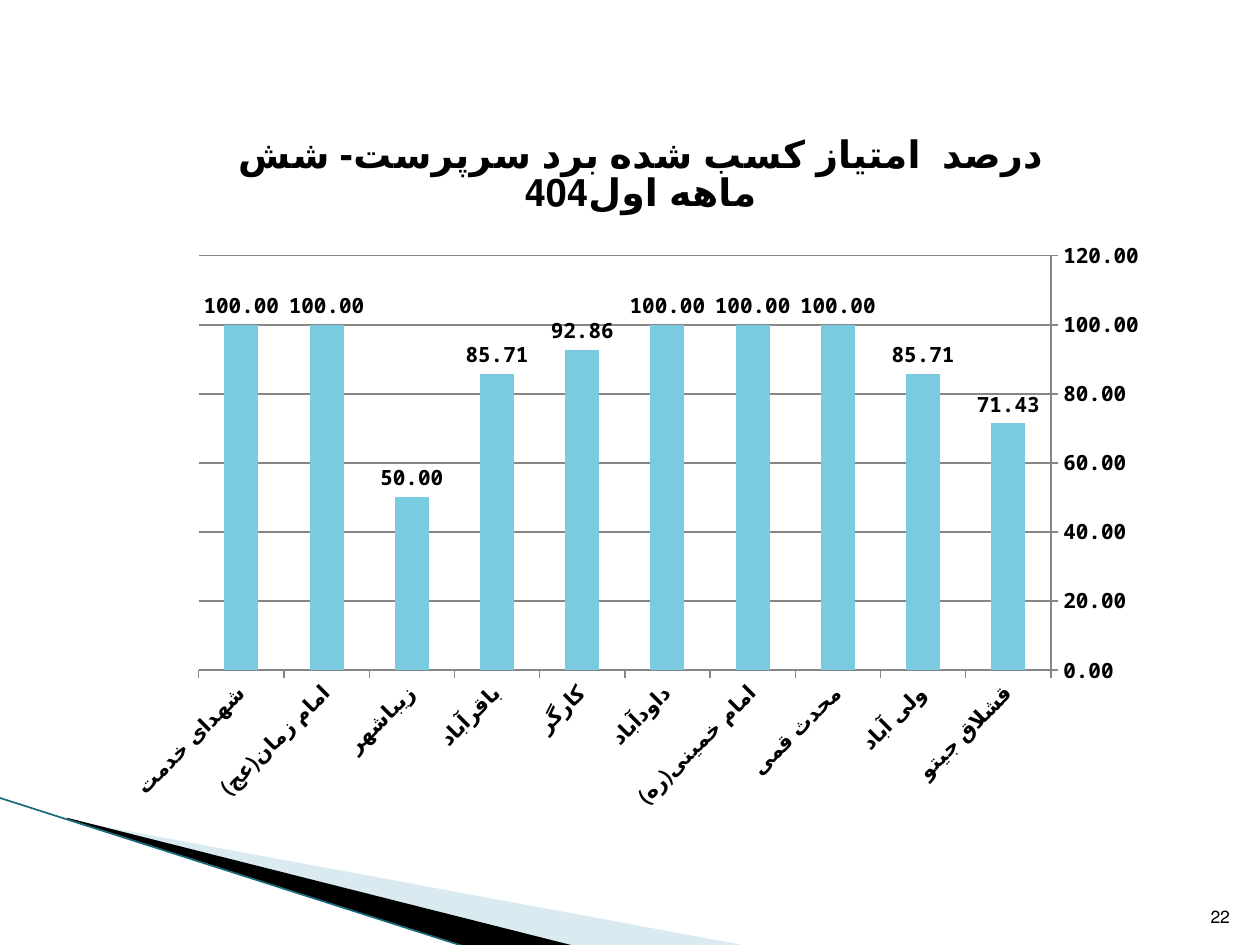
from lxml import etree
from pptx import Presentation
from pptx.chart.data import CategoryChartData
from pptx.dml.color import RGBColor
from pptx.enum.chart import XL_CHART_TYPE, XL_LABEL_POSITION, XL_TICK_MARK
from pptx.enum.shapes import MSO_CONNECTOR
from pptx.enum.text import MSO_ANCHOR, PP_ALIGN
from pptx.oxml import parse_xml
from pptx.oxml.ns import nsdecls, qn
from pptx.util import Inches, Pt

COLUMNS = XL_CHART_TYPE.COLUMN_CLUSTERED
OUTSIDE_END = XL_LABEL_POSITION.OUTSIDE_END
TICK_OUT = XL_TICK_MARK.OUTSIDE
STRAIGHT = MSO_CONNECTOR.STRAIGHT
BOTTOM = MSO_ANCHOR.BOTTOM
RIGHT = PP_ALIGN.RIGHT

FONT = "Noto Sans Mono"
BLACK, GREY, BAR = "000000", "868686", "7ACBE0"
PALE, TEAL = "A0CBDC", "17697D"

TITLE = "درصد  امتیاز کسب شده برد سرپرست- شش ماهه اول404"
SCORES = {
    "قشلاق جیتو": 71.43,
    "ولی آباد": 85.71,
    "محدث قمی": 100,
    "امام خمینی(ره)": 100,
    "داودآباد": 100,
    "کارگر": 92.86,
    "باقرآباد": 85.71,
    "زیباشهر": 50,
    "امام زمان(عج)": 100,
    "شهدای خدمت": 100,
}


def rgb(color):
    return RGBColor.from_string(color)


def style_font(font, size, bold=False):
    font.name = FONT
    font.size = Pt(size)
    font.bold = bold
    font.color.rgb = rgb(BLACK)


def add_wedge(s, left, top, points, color, opacity=None):
    """Draw a filled outline; points are offsets in inches from left, top."""
    corners = [(Inches(left + x), Inches(top + y)) for x, y in points]
    builder = s.shapes.build_freeform(*corners[0])
    builder.add_line_segments(corners[1:], close=True)
    shape = builder.convert_to_shape()
    shape.shadow.inherit = False
    shape.line.fill.background()
    shape.fill.solid()
    shape.fill.fore_color.rgb = rgb(color)
    if opacity is not None:
        clr = shape.fill._xPr.find(qn("a:solidFill"))[0]
        etree.SubElement(clr, qn("a:alpha"), val=str(opacity * 1000))


def add_corner_decoration(s, left, top):
    add_wedge(s, left + 0.56, top + 0.17,
              [(0, 0.01), (5.4, 1.01), (4.01, 1.01), (0, 0)], PALE, 40)
    add_wedge(s, left + 0.54, top + 0.16,
              [(0, 0), (4.04, 1.02), (3.19, 1.03), (0.01, 0.01)], BLACK)
    edge = s.shapes.add_connector(STRAIGHT, Inches(left), Inches(top),
                                  Inches(left + 3.72), Inches(top + 1.19))
    edge.line.color.rgb = rgb(TEAL)
    edge.line.width = Pt(0.95)
    etree.SubElement(edge._element.spPr, qn("a:effectLst"))


def add_slide_number(s, left, top, width, height, number):
    box = s.shapes.add_textbox(Inches(left), Inches(top), Inches(width), Inches(height))
    tf = box.text_frame
    tf.word_wrap = True
    tf.vertical_anchor = BOTTOM
    p = tf.paragraphs[0]
    p.alignment = RIGHT
    p._p.get_or_add_pPr().set("rtl", "1")
    r = p.add_run()
    r.text = number
    style_font(r.font, 10)


def set_plot_box(chart, x, y, w, h):
    """Fix the inner plot area, in fractions of the chart."""
    plot_area = chart._chartSpace.chart.plotArea
    for old in plot_area.findall(qn("c:layout")):
        plot_area.remove(old)
    sizes = "".join(f'<c:{tag} val="{val}"/>'
                    for tag, val in zip("xywh", (x, y, w, h)))
    plot_area.insert(0, parse_xml(
        f'<c:layout {nsdecls("c")}><c:manualLayout>'
        '<c:layoutTarget val="inner"/><c:xMode val="edge"/><c:yMode val="edge"/>'
        f'{sizes}</c:manualLayout></c:layout>'))


def style_axis(axis):
    axis.major_tick_mark = TICK_OUT
    axis.format.line.color.rgb = rgb(GREY)
    style_font(axis.tick_labels.font, 12, bold=True)


def add_score_chart(s, left, top, width, height):
    data = CategoryChartData(number_format="0.00")
    data.categories = list(SCORES)
    data.add_series("Series 1", list(SCORES.values()))
    chart = s.shapes.add_chart(COLUMNS, Inches(left), Inches(top), Inches(width),
                               Inches(height), data).chart
    style_font(chart.font, 18)
    chart.has_legend = False
    chart.has_title = True
    p = chart.chart_title.text_frame.paragraphs[0]
    r = p.add_run()
    r.text = TITLE
    style_font(r.font, 21.6, bold=True)
    chart.chart_title.include_in_layout = False
    set_plot_box(chart, 0.08, 0.21, 0.81, 0.58)

    categories, values = chart.category_axis, chart.value_axis
    style_axis(categories)
    categories.reverse_order = True
    categories._element.txPr.bodyPr.set("rot", "-2700000")
    style_axis(values)
    values.minimum_scale, values.maximum_scale, values.major_unit = 0, 120, 20
    values.tick_labels.number_format = "0.00"
    values.tick_labels.number_format_is_linked = False
    values.major_gridlines.format.line.color.rgb = rgb(GREY)

    plot = chart.plots[0]
    plot.gap_width = 150
    plot.vary_by_categories = False
    bars = plot.series[0].format.fill
    bars.solid()
    bars.fore_color.rgb = rgb(BAR)
    plot.has_data_labels = True
    labels = plot.data_labels
    labels.show_value = True
    labels.position = OUTSIDE_END
    labels.number_format = "0.00"
    labels.number_format_is_linked = False
    style_font(labels.font, 12, bold=True)


def main():
    prs = Presentation()
    prs.slide_width, prs.slide_height = Inches(10), Inches(7.5)
    s = prs.slides.add_slide(prs.slide_layouts[6])
    add_corner_decoration(s, -0.01, 6.33)
    add_slide_number(s, 9.46, 7.01, 0.4, 0.4, "22")
    add_score_chart(s, 0.91, 0.84, 8.35, 5.67)
    prs.save("out.pptx")


if __name__ == "__main__":
    main()
